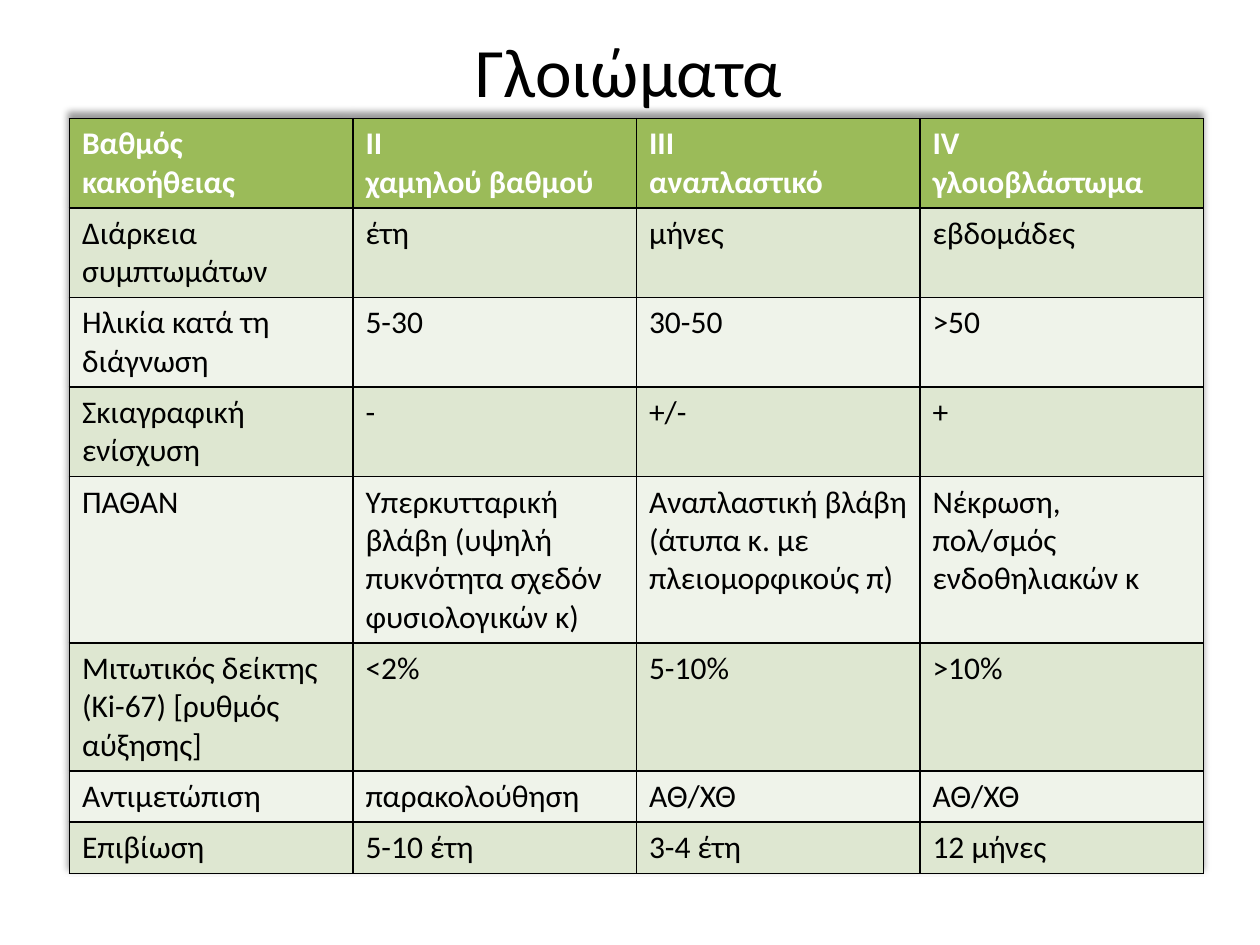
import dataclasses

import lxml.etree
import pptx
import pptx.dml.color
import pptx.enum.text
import pptx.oxml
import pptx.oxml.ns
import pptx.util

Cm = pptx.util.Cm
Pt = pptx.util.Pt
RGBColor = pptx.dml.color.RGBColor


@dataclasses.dataclass(frozen=True)
class Theme:
    """Colours, font and type sizes of the slide."""
    font: str = "Calibri"
    title_size: float = 39.6
    cell_size: float = 18
    text: str = "000000"
    header_text: str = "FFFFFF"
    header_fill: str = "9BBB59"
    band_fills: tuple = ("DEE7D1", "EFF3EA")
    border: str = "000000"
    border_width: float = 1


THEME = Theme()

TITLE = "Γλοιώματα "
ROWS = [
    ["Βαθμός κακοήθειας", "ΙΙ\nχαμηλού βαθμού", "ΙΙΙ\nαναπλαστικό", "IV\nγλοιοβλάστωμα"],
    ["Διάρκεια συμπτωμάτων", "έτη", "μήνες", "εβδομάδες"],
    ["Ηλικία κατά τη διάγνωση", "5-30", "30-50", ">50"],
    ["Σκιαγραφική ενίσχυση", "-", "+/-", "+"],
    ["ΠΑΘΑΝ", "Υπερκυτταρική βλάβη (υψηλή πυκνότητα σχεδόν φυσιολογικών κ)",
     "Αναπλαστική βλάβη (άτυπα κ. με πλειομορφικούς π)",
     "Νέκρωση, πολ/σμός ενδοθηλιακών κ"],
    ["Μιτωτικός δείκτης\n(Ki-67) [ρυθμός αύξησης]", "<2%", "5-10%", ">10%"],
    ["Αντιμετώπιση", "παρακολούθηση", "ΑΘ/ΧΘ", "ΑΘ/ΧΘ"],
    ["Επιβίωση", "5-10 έτη", "3-4 έτη", "12 μήνες"],
]


def set_attributes(target, values):
    """Set each named attribute of the target."""
    for name, value in values.items():
        setattr(target, name, value)


def format_text(text_frame, size, color, bold):
    """Give every paragraph the theme font, a size, a colour and a weight."""
    for paragraph in text_frame.paragraphs:
        set_attributes(paragraph.font, {"name": THEME.font, "size": Pt(size), "bold": bold})
        paragraph.font.color.rgb = RGBColor.from_string(color)


def add_borders(cell):
    """Draw a line on all four sides of a cell."""
    properties = cell._tc.get_or_add_tcPr()
    for side in ("lnL", "lnR", "lnT", "lnB"):
        properties.append(pptx.oxml.parse_xml(
            f'<a:{side} {pptx.oxml.ns.nsdecls("a")} w="{Pt(THEME.border_width)}">'
            f'<a:solidFill><a:srgbClr val="{THEME.border}"/></a:solidFill></a:{side}>'))


def add_table_shadow(table):
    """Cast a soft shadow upwards from the table."""
    table._tbl.tblPr.insert(0, pptx.oxml.parse_xml(
        f'<a:effectLst {pptx.oxml.ns.nsdecls("a")}>'
        f'<a:outerShdw blurRad="{Pt(4)}" dist="{Pt(3)}" dir="16200000" rotWithShape="0">'
        '<a:srgbClr val="000000"><a:alpha val="40000"/></a:srgbClr>'
        '</a:outerShdw></a:effectLst>'))


def place_title(slide, left, top, width, height):
    """Fill the title placeholder and move it to its box."""
    title = slide.shapes.title
    set_attributes(title, {"left": left, "top": top, "width": width, "height": height})
    title.text_frame.text = TITLE
    title.text_frame.vertical_anchor = pptx.enum.text.MSO_ANCHOR.MIDDLE
    title.text_frame.paragraphs[0].alignment = pptx.enum.text.PP_ALIGN.CENTER
    format_text(title.text_frame, THEME.title_size, THEME.text, False)


def place_table(slide, left, top, width, row_height):
    """Build the banded comparison table with equal columns."""
    shape = slide.shapes.add_table(
        len(ROWS), len(ROWS[0]), left, top, width, row_height * len(ROWS))
    add_table_shadow(shape.table)
    for row_index, row in enumerate(ROWS):
        header = row_index == 0
        fill = THEME.header_fill if header else THEME.band_fills[(row_index - 1) % 2]
        color = THEME.header_text if header else THEME.text
        for column_index, text in enumerate(row):
            cell = shape.table.cell(row_index, column_index)
            cell.text = text
            format_text(cell.text_frame, THEME.cell_size, color, header)
            add_borders(cell)
            cell.fill.solid()
            cell.fill.fore_color.rgb = RGBColor.from_string(fill)


def main():
    """Build and save the slide."""
    presentation = pptx.Presentation()
    set_attributes(presentation, {"slide_width": Cm(25.4), "slide_height": Cm(19.05)})
    slide = presentation.slides.add_slide(presentation.slide_layouts[5])
    left, width = Cm(1.4), Cm(22.86)
    place_title(slide, left, Cm(0.4), width, Cm(2))
    place_table(slide, left, Cm(2.39), width, Cm(1.03))
    presentation.save("out.pptx")


if __name__ == "__main__":
    main()
